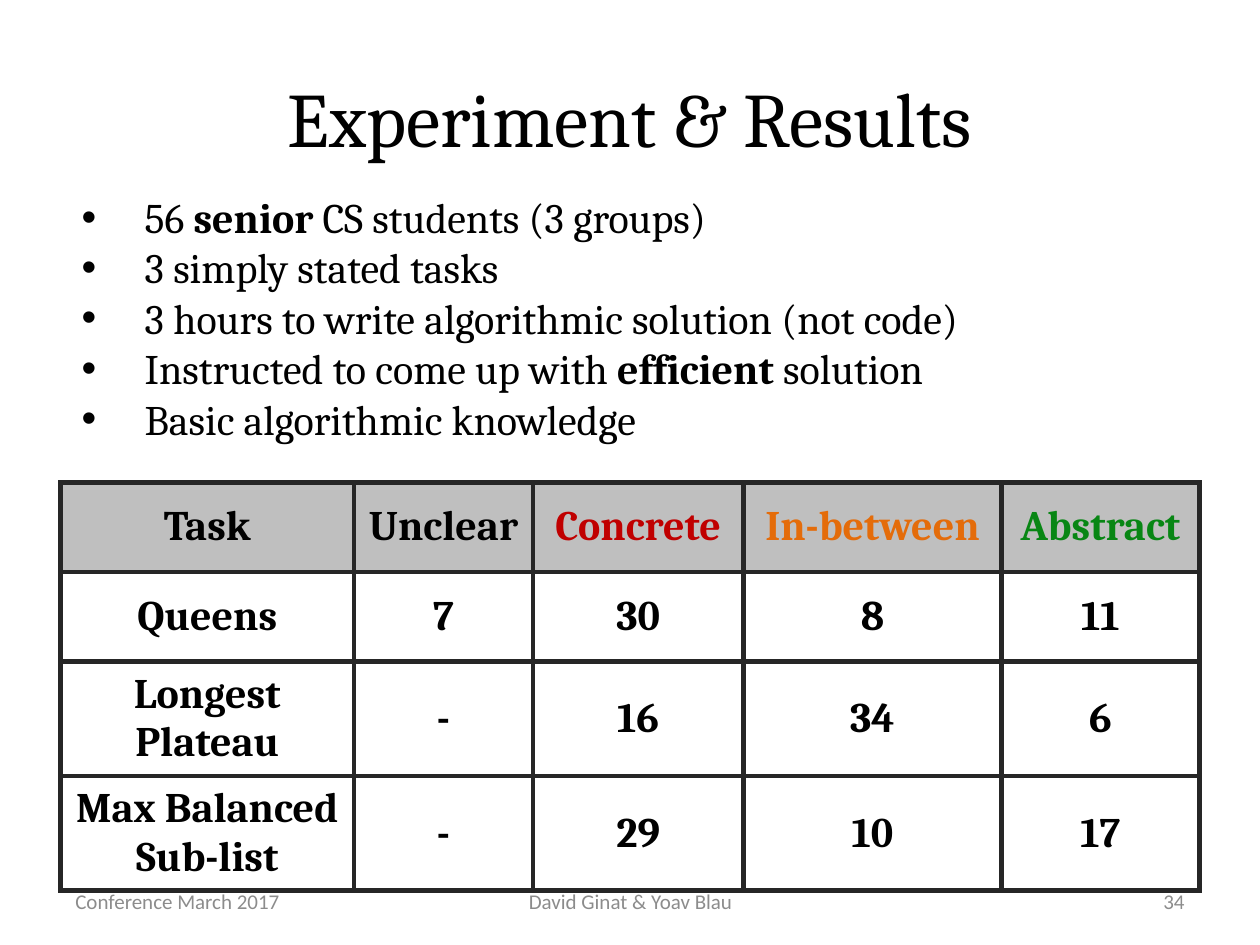
from lxml import etree
from pptx import Presentation
from pptx.dml.color import RGBColor
from pptx.enum import text
from pptx.oxml import ns
from pptx.util import Inches, Pt

COLORS = {
    "black": "000000", "white": "FFFFFF", "header": "BFBFBF", "border": "262626",
    "concrete": "C00000", "between": "E46C0A", "abstract": "088614", "footer": "8C8C8C",
}
LEFT, CENTER, RIGHT = text.PP_ALIGN.LEFT, text.PP_ALIGN.CENTER, text.PP_ALIGN.RIGHT
MIDDLE = text.MSO_ANCHOR.MIDDLE

TITLE = "Experiment & Results"
# Each bullet is a list of spans; every second span is bold.
BULLETS = [
    ["56 ", "senior", " CS students (3 groups)"],
    ["3 simply stated tasks"],
    ["3 hours to write algorithmic solution (not code)"],
    ["Instructed to come up with ", "efficient", " solution"],
    ["Basic algorithmic knowledge"],
]
RESULTS = [
    ["Task", "Unclear", "Concrete", "In-between", "Abstract"],
    ["Queens", "7", "30", "8", "11"],
    ["Longest Plateau", "-", "16", "34", "6"],
    ["Max Balanced Sub-list", "-", "29", "10", "17"],
]
HEADER_COLORS = ["black", "black", "concrete", "between", "abstract"]
COLUMN_WIDTHS = [2.33, 1.42, 1.67, 2.05, 1.57]
ROW_HEIGHTS = [0.71, 0.71, 0.91, 0.91]
FOOTERS = [
    ("Conference March 2017", 0.5, 2.33, LEFT),
    ("David Ginat & Yoav Blau", 3.42, 3.17, CENTER),
    ("34", 7.17, 2.33, RIGHT),
]


def write(para, words, size=24, font="Cambria", color="black", bold=False, align=LEFT):
    para.alignment = align
    span = para.add_run()
    span.text = words
    span.font.size = Pt(size)
    span.font.name = font
    span.font.bold = bold
    span.font.color.rgb = RGBColor.from_string(COLORS[color])


def add_box(page, left, top, width, height, anchor=MIDDLE):
    box = page.shapes.add_textbox(*map(Inches, (left, top, width, height)))
    box.text_frame.word_wrap = True
    box.text_frame.vertical_anchor = anchor
    return box.text_frame


def add_bullet(para):
    props = para._p.get_or_add_pPr()
    props.set("marL", str(Inches(0.5)))
    props.set("indent", str(-Inches(0.5)))
    etree.SubElement(props, ns.qn("a:buFont")).set("typeface", "Arial")
    etree.SubElement(props, ns.qn("a:buChar")).set("char", "•")


def add_borders(cell, width=3):
    props = cell._tc.get_or_add_tcPr()
    for place, side in enumerate(("lnL", "lnR", "lnT", "lnB")):
        line = etree.Element(ns.qn("a:" + side), w=str(Pt(width)))
        fill = etree.SubElement(line, ns.qn("a:solidFill"))
        etree.SubElement(fill, ns.qn("a:srgbClr")).set("val", COLORS["border"])
        props.insert(place, line)


def add_results(page):
    frame = page.shapes.add_table(
        len(RESULTS), len(COLUMN_WIDTHS), Inches(0.48), Inches(3.83),
        Inches(sum(COLUMN_WIDTHS)), Inches(sum(ROW_HEIGHTS)))
    table = frame.table
    for column, width in zip(table.columns, COLUMN_WIDTHS):
        column.width = Inches(width)
    for row, height in zip(table.rows, ROW_HEIGHTS):
        row.height = Inches(height)
    for r, values in enumerate(RESULTS):
        for c, value in enumerate(values):
            cell = table.cell(r, c)
            cell.vertical_anchor = MIDDLE
            cell.fill.solid()
            cell.fill.fore_color.rgb = RGBColor.from_string(
                COLORS["white" if r else "header"])
            write(cell.text_frame.paragraphs[0], value, bold=True, align=CENTER,
                  color="black" if r else HEADER_COLORS[c])
            add_borders(cell)


def main():
    deck = Presentation()
    deck.slide_width, deck.slide_height = Inches(10), Inches(7.5)
    page = deck.slides.add_slide(deck.slide_layouts[6])

    title = add_box(page, 0.5, 0.3, 9, 1.25)
    write(title.paragraphs[0], TITLE, size=44, align=CENTER)

    add_results(page)

    body = add_box(page, 0.55, 1.47, 8.9, 2.12, anchor=text.MSO_ANCHOR.TOP)
    for i, spans in enumerate(BULLETS):
        para = body.add_paragraph() if i else body.paragraphs[0]
        add_bullet(para)
        for j, words in enumerate(spans):
            write(para, words, bold=j % 2 == 1)

    for words, left, width, align in FOOTERS:
        footer = add_box(page, left, 6.95, width, 0.4)
        write(footer.paragraphs[0], words, size=12, font="Calibri",
              color="footer", align=align)

    deck.save("out.pptx")


if __name__ == "__main__":
    main()
